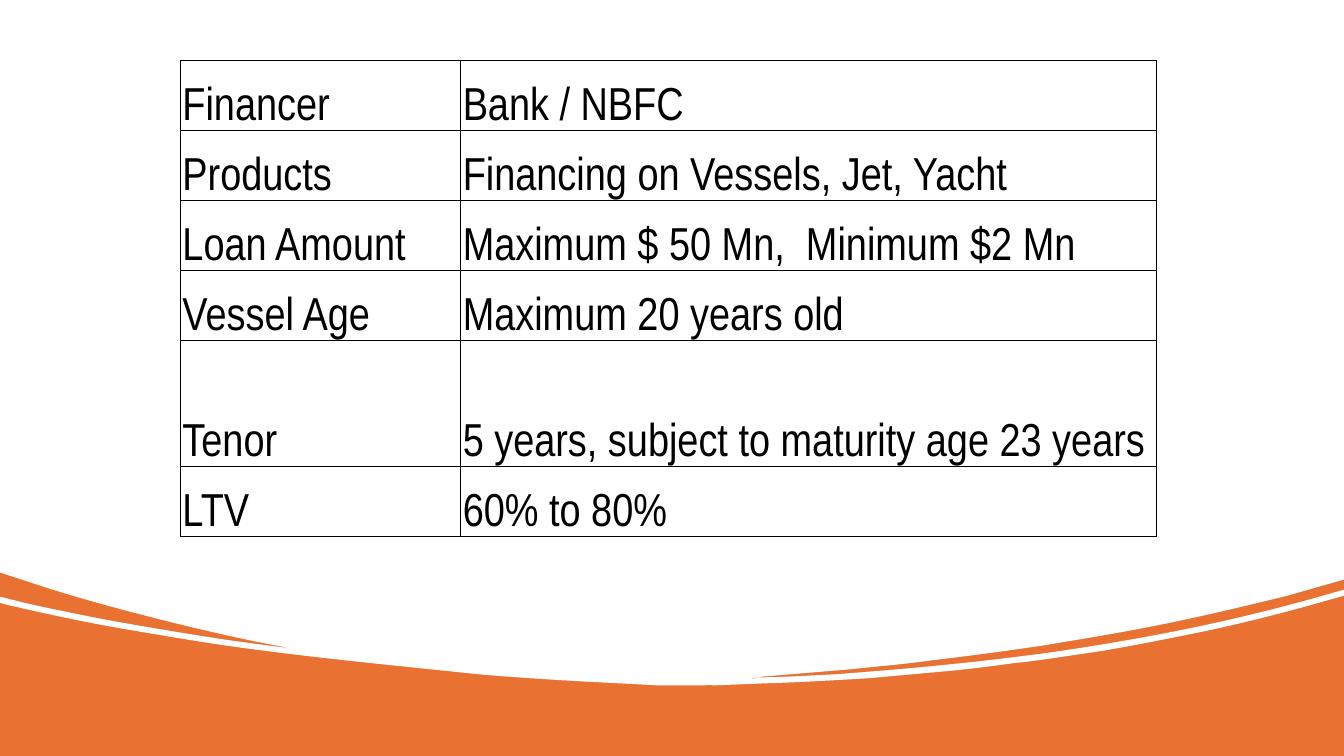
from lxml.etree import SubElement
from pptx import Presentation
from pptx.dml.color import RGBColor
from pptx.enum.shapes import MSO_SHAPE as Preset
from pptx.enum.text import MSO_ANCHOR as Anchor
from pptx.oxml.ns import qn
from pptx.util import Inches, Pt

# Content
LOAN_TERMS = [
    ("Financer", "Bank / NBFC"),
    ("Products", "Financing on Vessels, Jet, Yacht"),
    ("Loan Amount", "Maximum $ 50 Mn,  Minimum $2 Mn"),
    ("Vessel Age", "Maximum 20 years old"),
    ("Tenor", "5 years, subject to maturity age 23 years"),
    ("LTV", "60% to 80%"),
]
ORANGE, WHITE, BLACK = "E97132", "FFFFFF", "000000"
SLIDE_W, SLIDE_H = 13.33, 7.5

TABLE_LEFT, TABLE_TOP, TABLE_H = 1.79, 0.6, 4.72
COLUMN_WIDTHS = (2.78, 6.9)
TENOR_H = 1.25
CELL_MARGIN = 0.02

# White area in inches: two numbers are a line, six a cubic curve
WHITE_AREA = [
    (0, 0), (SLIDE_W, 0),
    # right crescent, upper edge
    (13.33, 5.58), (13.33, 5.75), (13.19, 5.79),
    (13.05, 5.83, 12.91, 5.87, 12.77, 5.91),
    (12.32, 6.02, 11.86, 6.13, 11.4, 6.22),
    (11.04, 6.29, 10.67, 6.35, 10.31, 6.41),
    (9.96, 6.46, 9.6, 6.51, 9.25, 6.55),
    (8.98, 6.59, 8.71, 6.61, 8.44, 6.64),
    (7.6, 6.71), (7.59, 6.71), (7.43, 6.73), (7.44, 6.73),
    # right crescent, lower edge
    (7.45, 6.73, 7.46, 6.73, 7.48, 6.73),
    (7.49, 6.73, 7.51, 6.72, 7.53, 6.72),
    (7.78, 6.72, 8.04, 6.7, 8.29, 6.69),
    (8.67, 6.66, 9.05, 6.63, 9.43, 6.59),
    (9.74, 6.56, 10.06, 6.52, 10.37, 6.48),
    (10.79, 6.42, 11.21, 6.35, 11.62, 6.27),
    (12.13, 6.17, 12.63, 6.05, 13.12, 5.91),
    (13.33, 5.85),
    # long bottom edge, right to left
    (13.33, 5.91), (12.94, 6.02),
    (12.61, 6.11, 12.29, 6.19, 11.96, 6.26),
    (11.62, 6.33, 11.27, 6.4, 10.92, 6.46),
    (10.63, 6.5, 10.34, 6.55, 10.05, 6.58),
    (9.83, 6.61, 9.6, 6.64, 9.38, 6.66),
    (8.6, 6.73),
    (8.26, 6.75, 7.92, 6.77, 7.58, 6.78),
    (7.08, 6.8),
    (7.04, 6.79, 7, 6.8, 6.96, 6.8),
    (6.62, 6.8), (6.54, 6.8), (5.76, 6.76),
    (5.42, 6.74, 5.09, 6.72, 4.75, 6.69),
    (3.69, 6.58),
    (3.32, 6.54, 2.95, 6.5, 2.58, 6.45),
    (2.17, 6.4, 1.76, 6.33, 1.35, 6.26),
    (0.92, 6.19, 0.5, 6.1, 0.07, 6),
    (0, 5.98),
    # left crescent, lower then upper edge
    (0, 5.92), (0.08, 5.94),
    (0.27, 5.99, 0.46, 6.03, 0.66, 6.07),
    (1.08, 6.16, 1.51, 6.23, 1.94, 6.3),
    (2.24, 6.35, 2.55, 6.39, 2.86, 6.43),
    (2.85, 6.43, 2.84, 6.42, 2.82, 6.42),
    (2.28, 6.32, 1.75, 6.19, 1.22, 6.05),
    (0.96, 5.98, 0.71, 5.91, 0.46, 5.83),
    (0, 5.68), (0, 5.58),
]


def rgb(color):
    return RGBColor.from_string(color)


def paint(shape, color):
    shape.fill.solid()
    shape.fill.fore_color.rgb = rgb(color)
    shape.line.fill.background()
    shape.shadow.inherit = False


def add_outline(shapes, outline):
    """Draw lines between the end points, then bend those that are curves."""
    start, *ends = [(Inches(s[-2]), Inches(s[-1])) for s in outline]
    builder = shapes.build_freeform(*start)
    builder.add_line_segments(ends, close=True)
    shape = builder.convert_to_shape()
    lines = list(shape._element.iter(qn("a:lnTo")))
    for line, segment in zip(lines, outline[1:]):
        if len(segment) == 6:
            line.tag = qn("a:cubicBezTo")
            for i in (0, 2):
                control = SubElement(line, qn("a:pt"), x=str(Inches(segment[i])),
                                     y=str(Inches(segment[i + 1])))
                line.insert(i // 2, control)
    return shape


def write(frame, text, font="Arial Narrow", size=33, color=BLACK):
    run = frame.paragraphs[0].add_run()
    run.text = text
    run.font.name = font
    run.font.size = Pt(size)
    run.font.color.rgb = rgb(color)


def add_borders(cell, color=BLACK, width=0.5):
    properties = cell._tc.get_or_add_tcPr()
    for side in ("lnL", "lnR", "lnT", "lnB"):
        border = SubElement(properties, qn(f"a:{side}"), w=str(Pt(width)))
        fill = SubElement(border, qn("a:solidFill"))
        SubElement(fill, qn("a:srgbClr"), val=color)


prs = Presentation()
prs.slide_width, prs.slide_height = Inches(SLIDE_W), Inches(SLIDE_H)
slide = prs.slides.add_slide(prs.slide_layouts[6])
shapes = slide.shapes

# Orange ground with the white curved area over it
ground = shapes.add_shape(Preset.RECTANGLE, 0, 0, prs.slide_width, prs.slide_height)
paint(ground, ORANGE)
paint(add_outline(shapes, WHITE_AREA), WHITE)

# Loan terms table
terms = shapes.add_table(
    len(LOAN_TERMS), len(COLUMN_WIDTHS), Inches(TABLE_LEFT), Inches(TABLE_TOP),
    Inches(sum(COLUMN_WIDTHS)), Inches(TABLE_H)).table
terms.first_row = terms.horz_banding = False
for column, width in zip(terms.columns, COLUMN_WIDTHS):
    column.width = Inches(width)

plain_h = (TABLE_H - TENOR_H) / (len(LOAN_TERMS) - 1)
for r, entry in enumerate(LOAN_TERMS):
    terms.rows[r].height = Inches(TENOR_H if entry[0] == "Tenor" else plain_h)
    for c, text in enumerate(entry):
        cell = terms.cell(r, c)
        cell.vertical_anchor = Anchor.BOTTOM
        cell.margin_left = cell.margin_right = cell.margin_top = Inches(CELL_MARGIN)
        cell.margin_bottom = 0
        add_borders(cell)
        cell.fill.background()
        write(cell.text_frame, text)

prs.save("out.pptx")
